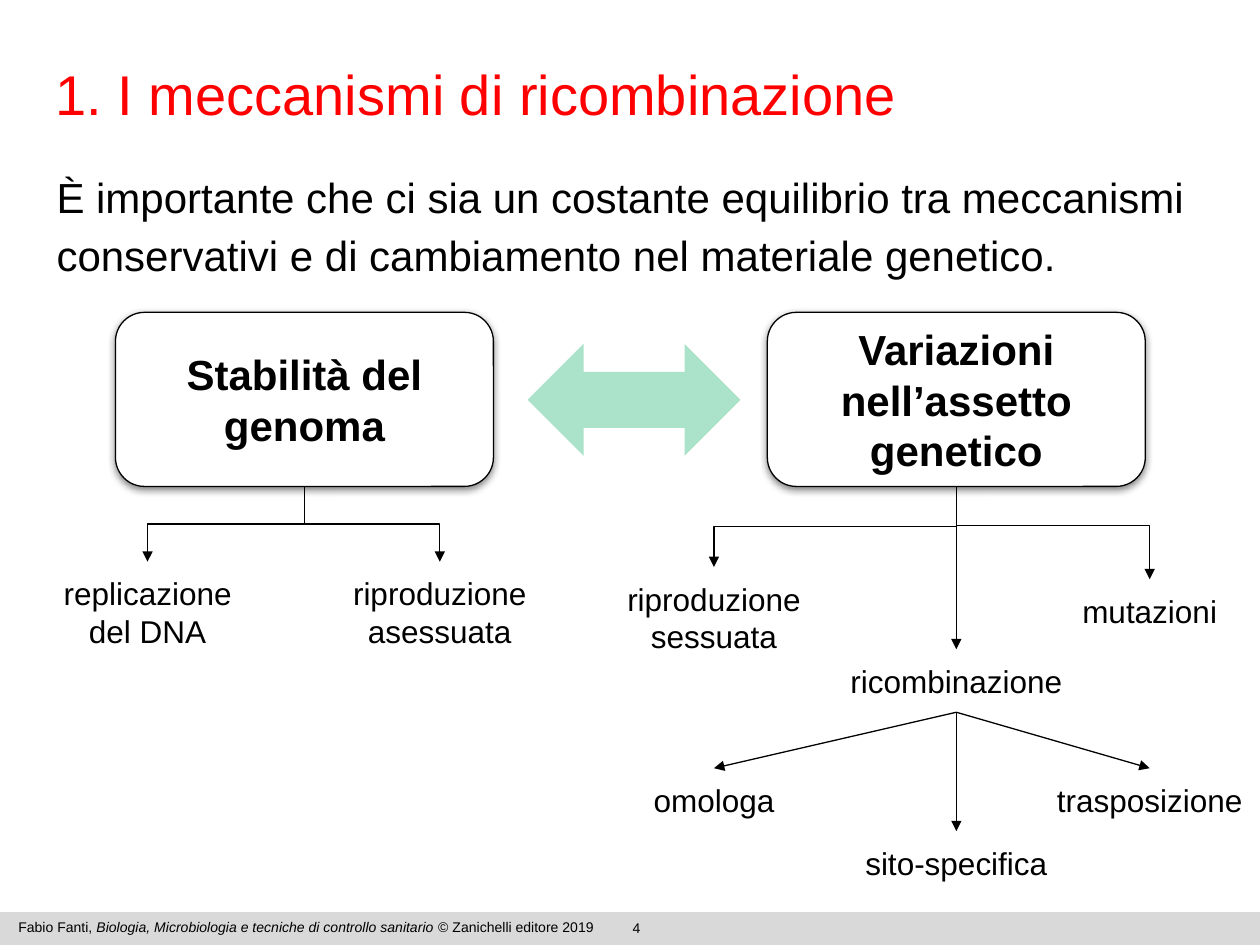
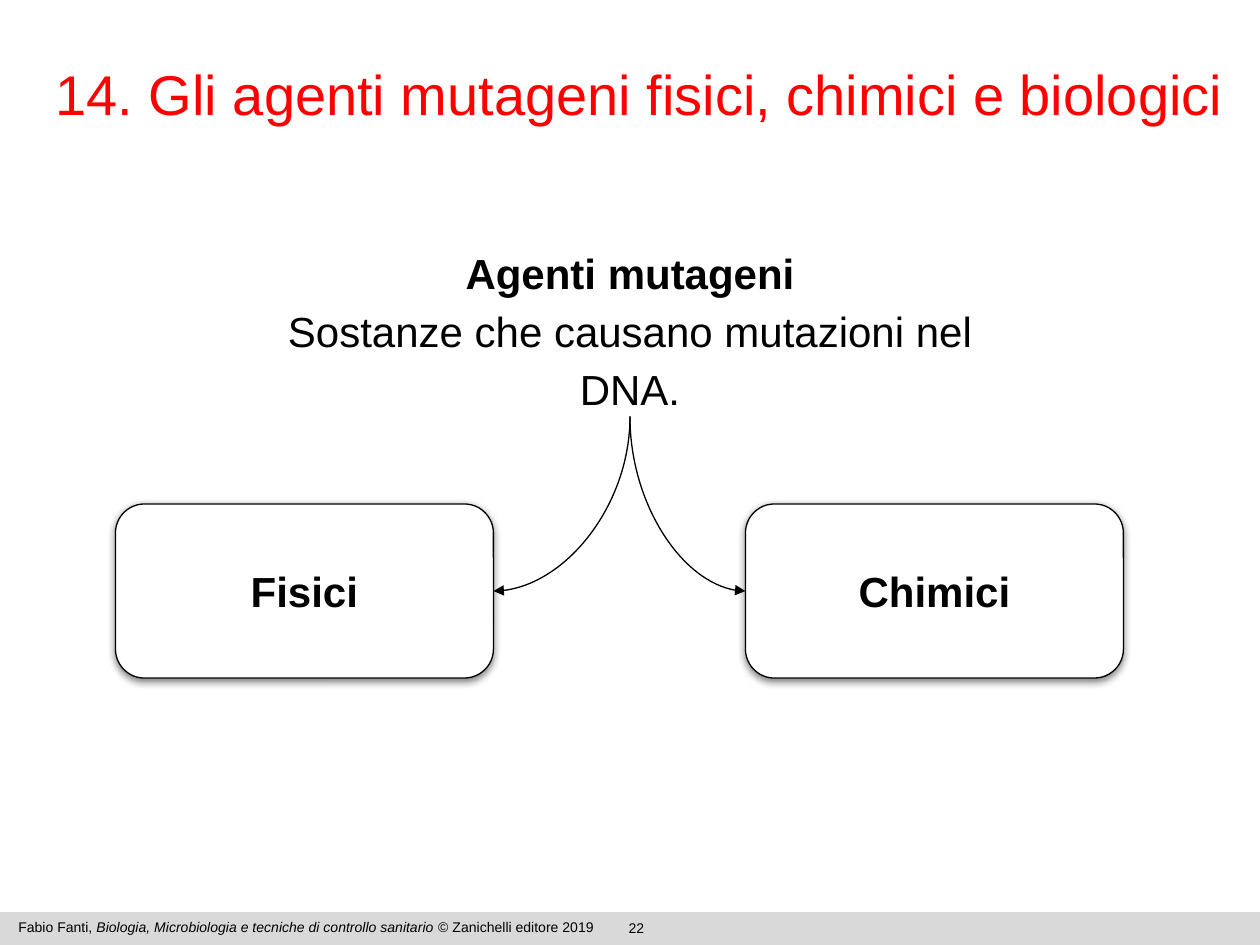
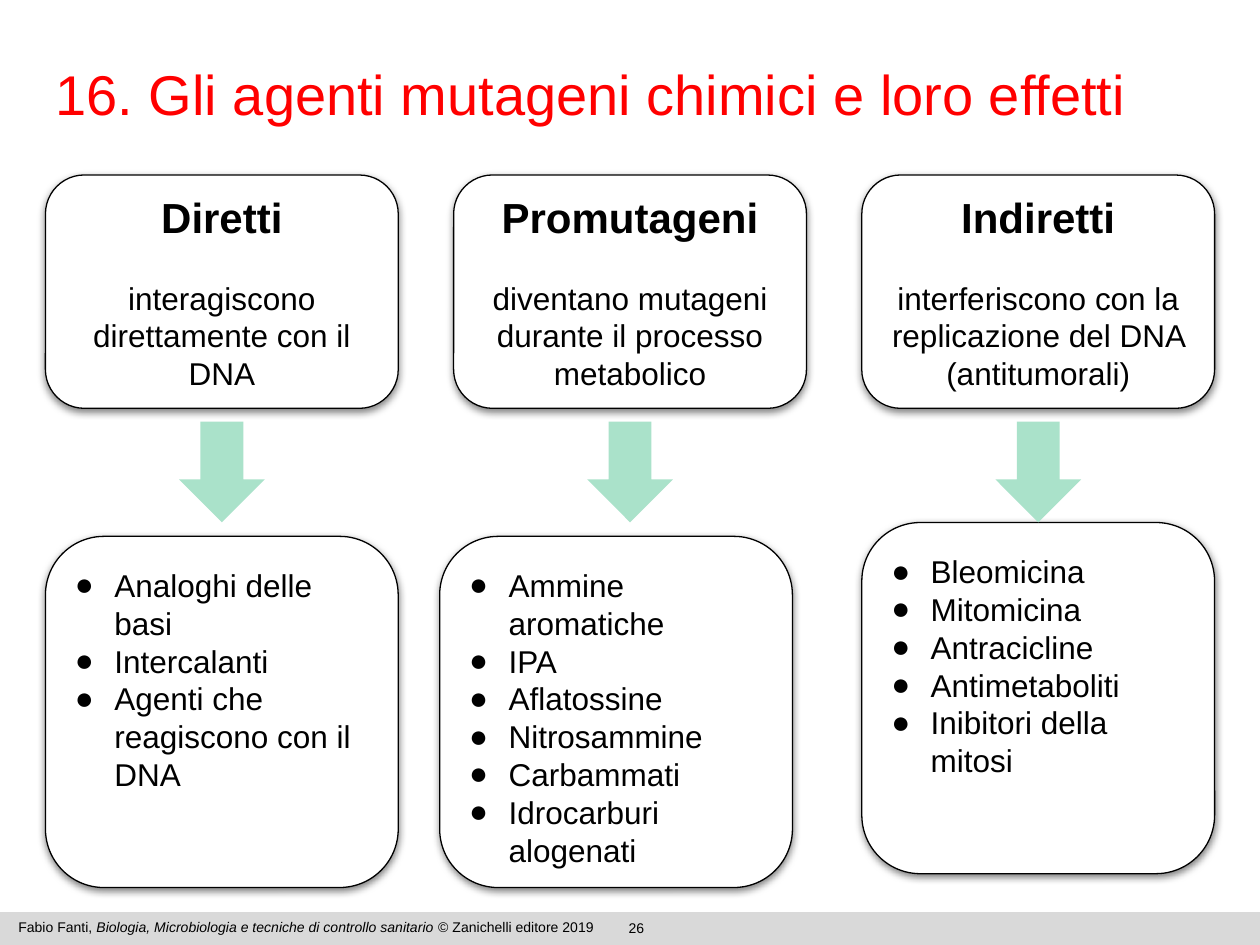
from dataclasses import dataclass

from lxml import etree
from pptx import Presentation
from pptx.dml.color import RGBColor
from pptx.enum import shapes, text
from pptx.oxml.ns import qn
from pptx.util import Pt


@dataclass(frozen=True)
class Theme:
    font: str = "Arial"
    black: RGBColor = RGBColor(0, 0, 0)
    white: RGBColor = RGBColor(255, 255, 255)
    title: RGBColor = RGBColor(255, 0, 0)
    band: RGBColor = RGBColor(0xD9, 0xD9, 0xD9)
    arrow: RGBColor = RGBColor(0xAA, 0xE2, 0xCA)
    title_size: int = 32
    body_size: int = 24
    label_size: int = 18
    footer_size: int = 8
    line: float = 0.75


T = Theme()
SHAPE = shapes.MSO_SHAPE
LINK = shapes.MSO_CONNECTOR
LEFT, CENTER = text.PP_ALIGN.LEFT, text.PP_ALIGN.CENTER
TOP, MIDDLE = text.MSO_ANCHOR.TOP, text.MSO_ANCHOR.MIDDLE


def points(*values):
    return [Pt(v) for v in values]


def add_xml(parent, tag, **attrs):
    return etree.SubElement(parent, qn(tag), {k: str(v) for k, v in attrs.items()})


def set_format(target, **values):
    for name, value in values.items():
        setattr(target, name, value)


def add_bullet(p):
    pPr = p._p.get_or_add_pPr()
    set_format_values = {"marL": Pt(22.5), "indent": -Pt(22.5)}
    for name, value in set_format_values.items():
        pPr.set(name, str(value))
    add_xml(add_xml(pPr, "a:buClr"), "a:srgbClr", val=T.black)
    add_xml(pPr, "a:buFont", typeface=T.font)
    add_xml(pPr, "a:buChar", char="●")


def write(sp, paragraphs, size, color=T.black, align=CENTER, anchor=TOP,
          inset=(7.2, 7.2), spacing=None, bullets=False, gap=0):
    """Fill a shape; each paragraph is a list of (text, font values) runs."""
    tf = sp.text_frame
    side, top = points(*inset)
    set_format(tf, word_wrap=True, auto_size=text.MSO_AUTO_SIZE.NONE, vertical_anchor=anchor,
               margin_left=side, margin_right=side, margin_top=top, margin_bottom=top)
    for i, runs in enumerate(paragraphs):
        p = tf.paragraphs[0] if i == 0 else tf.add_paragraph()
        p.alignment = align
        if spacing:
            p.line_spacing = spacing
        if i and gap:
            p.space_before = Pt(gap)
        if bullets:
            add_bullet(p)
        for words, font in runs:
            r = p.add_run()
            r.text = words
            set_format(r.font, **{"name": T.font, "size": Pt(size), **font})
            r.font.color.rgb = color


def add_text(s, box, paragraphs, size, **options):
    sp = s.shapes.add_textbox(*points(*box))
    write(sp, paragraphs, size, **options)
    return sp


def add_plain(s, kind, box, color):
    sp = s.shapes.add_shape(kind, *points(*box))
    sp.shadow.inherit = False
    sp.fill.solid()
    sp.fill.fore_color.rgb = color
    sp.line.fill.background()
    return sp


def add_card(s, box, paragraphs, size=T.body_size, anchor=MIDDLE, **options):
    """White rounded box with a black outline and a soft shadow below."""
    sp = add_plain(s, SHAPE.ROUNDED_RECTANGLE, box, T.white)
    sp.line.color.rgb = T.black
    sp.line.width = Pt(T.line)
    effects = sp.element.spPr.find(qn("a:effectLst"))
    shadow = add_xml(effects, "a:outerShdw", blurRad=Pt(4.5), dist=Pt(1.5),
                     dir=5400000, algn="bl", rotWithShape=0)
    add_xml(add_xml(shadow, "a:srgbClr", val=T.black), "a:alpha", val=50000)
    write(sp, paragraphs, size, anchor=anchor, **options)
    return sp


def add_label(s, center, top, width, height, words):
    return add_text(s, (center - width / 2, top, width, height), [[(words, {})]], T.label_size)


def finish_arrow(cx):
    cx.line.color.rgb = T.black
    cx.line.width = Pt(T.line)
    add_xml(cx.line._get_or_add_ln(), "a:tailEnd", type="triangle")
    add_xml(cx.element.spPr, "a:effectLst")


def add_straight(s, start, end):
    """Arrow from the bottom of one shape to the top of another."""
    cx = s.shapes.add_connector(LINK.STRAIGHT, 0, 0, 0, 0)
    cx.begin_connect(start, 2)
    cx.end_connect(end, 0)
    finish_arrow(cx)


def add_turned(s, kind, start, end, preset=None, bend=None):
    """Arrow that leaves downwards: a connector turned a quarter about its middle."""
    (x1, y1), (x2, y2) = start, end
    cx, cy = (x1 + x2) / 2, (y1 + y2) / 2
    half_w, half_h = (y2 - y1) / 2, abs(x2 - x1) / 2
    link = s.shapes.add_connector(kind, *points(cx - half_w, cy - half_h, cx + half_w, cy + half_h))
    xfrm = link.element.spPr.find(qn("a:xfrm"))
    if x2 < x1:
        xfrm.set("rot", "5400000")
    else:
        xfrm.set("rot", "16200000")
        xfrm.set("flipH", "1")
    geometry = link.element.spPr.find(qn("a:prstGeom"))
    if preset:
        geometry.set("prst", preset)
    if bend:
        guides = geometry.find(qn("a:avLst"))
        add_xml(guides, "a:gd", name="adj1", fmla=f"val {round(bend * 100000)}")
    finish_arrow(link)


def bottom_of(sp):
    return (sp.left + sp.width / 2) / Pt(1), (sp.top + sp.height) / Pt(1)


def top_of(sp):
    return (sp.left + sp.width / 2) / Pt(1), sp.top / Pt(1)


def new_slide(prs, title, number):
    s = prs.slides.add_slide(prs.slide_layouts[5])
    sp = s.shapes.title
    set_format(sp, **dict(zip(("left", "top", "width", "height"), points(25.2, 30.2, 694.8, 69.8))))
    write(sp, [[(title, {})]], T.title_size, T.title, LEFT, inset=(6.6, 3.6))
    add_plain(s, SHAPE.RECTANGLE, (0, 521.3, 720, 18.7), T.band)
    small = {"size": T.footer_size, "inset": (7.2, 3.6)}
    add_text(s, (283.5, 522, 160.5, 12.2), [[(str(number), {})]], **small)
    credit = [("Fabio Fanti, ", {}),
              ("Biologia, Microbiologia e tecniche di controllo sanitario", {"italic": True}),
              (" © Zanichelli editore 2019", {})]
    add_text(s, (3.4, 521.3, 363, 17.3), [credit], align=LEFT, **small)
    return s


def build_recombination(prs):
    s = new_slide(prs, "1. I meccanismi di ricombinazione", 4)
    intro = ("È importante che ci sia un costante equilibrio tra meccanismi "
             "conservativi e di cambiamento nel materiale genetico.")
    add_text(s, (25.2, 86.4, 672, 77), [[(intro, {})]], T.body_size, align=LEFT, spacing=1.15)
    stability, variation = [
        add_card(s, (x, 178.5, 216, 99.5), [[(words, {"bold": True})]])
        for x, words in ((66, "Stabilità del genoma"), (438.5, "Variazioni nell’assetto genetico"))]
    add_plain(s, SHAPE.LEFT_RIGHT_ARROW, (301.5, 196.5, 121.7, 64), T.arrow)

    replication = add_label(s, 84.3, 321, 118, 57.5, "replicazione del DNA")
    asexual = add_label(s, 251.3, 321, 155.5, 57.5, "riproduzione asessuata")
    sexual = add_label(s, 408, 324, 188, 51, "riproduzione sessuata")
    mutations = add_label(s, 657, 331, 103, 36, "mutazioni")
    recombination = add_label(s, 546.5, 371, 188, 36, "ricombinazione")
    kinds = [add_label(s, *place, 36, words) for *place, words in (
        (408, 439, 188, "omologa"),
        (546.5, 475, 188, "sito-specifica"),
        (657, 439, 122, "trasposizione"))]

    for parent, child, bend in ((stability, replication, 0.5), (stability, asexual, 0.5),
                                (variation, sexual, 0.5), (variation, mutations, 0.422)):
        add_turned(s, LINK.ELBOW, bottom_of(parent), top_of(child), bend=bend)
    add_straight(s, variation, recombination)
    for kind in kinds:
        add_straight(s, recombination, kind)


def build_agents(prs):
    s = new_slide(prs, "14. Gli agenti mutageni fisici, chimici e biologici", 22)
    definition = add_text(s, (132.7, 130, 454.6, 108),
                          [[("Agenti mutageni", {"bold": True})],
                           [("Sostanze che causano mutazioni nel DNA.", {})]],
                          T.body_size, spacing=1.15)
    top, width, height = 288, 216, 99.5
    for x, side, words in ((66, 66 + width, "Fisici"), (426, 426, "Chimici")):
        add_card(s, (x, top, width, height), [[(words, {"bold": True})]])
        add_turned(s, LINK.CURVE, bottom_of(definition), (side, top + height / 2),
                   preset="curvedConnector2")


def build_chemical_agents(prs):
    s = new_slide(prs, "16. Gli agenti mutageni chimici e loro effetti", 26)
    left, pitch, width, arrow_width = 26, 233.25, 201.6, 49
    columns = (
        ("Diretti", "interagiscono direttamente con il DNA", 0, 306.5,
         ("Analoghi delle basi", "Intercalanti", "Agenti che reagiscono con il DNA")),
        ("Promutageni", "diventano mutageni durante il processo metabolico", -8, 306.5,
         ("Ammine aromatiche", "IPA", "Aflatossine", "Nitrosammine", "Carbammati",
          "Idrocarburi alogenati")),
        ("Indiretti", "interferiscono con la replicazione del DNA (antitumorali)", 0, 298.6,
         ("Bleomicina", "Mitomicina", "Antracicline", "Antimetaboliti",
          "Inibitori della mitosi")))
    for i, (name, effect, shift, list_top, examples) in enumerate(columns):
        x = left + i * pitch
        add_card(s, (x, 100, width, 133.3),
                 [[(name, {"bold": True})], [(effect, {"size": Pt(T.label_size)})]], gap=21)
        add_card(s, (x + shift, list_top, width, 200.7), [[(e, {})] for e in examples],
                 T.label_size, anchor=TOP, align=LEFT, bullets=True)
        add_plain(s, SHAPE.DOWN_ARROW,
                  (x + (width - arrow_width) / 2, 241, arrow_width, 57.5), T.arrow)


def main():
    prs = Presentation()
    prs.slide_width, prs.slide_height = points(720, 540)
    build_recombination(prs)
    build_agents(prs)
    build_chemical_agents(prs)
    prs.save("out.pptx")


if __name__ == "__main__":
    main()
